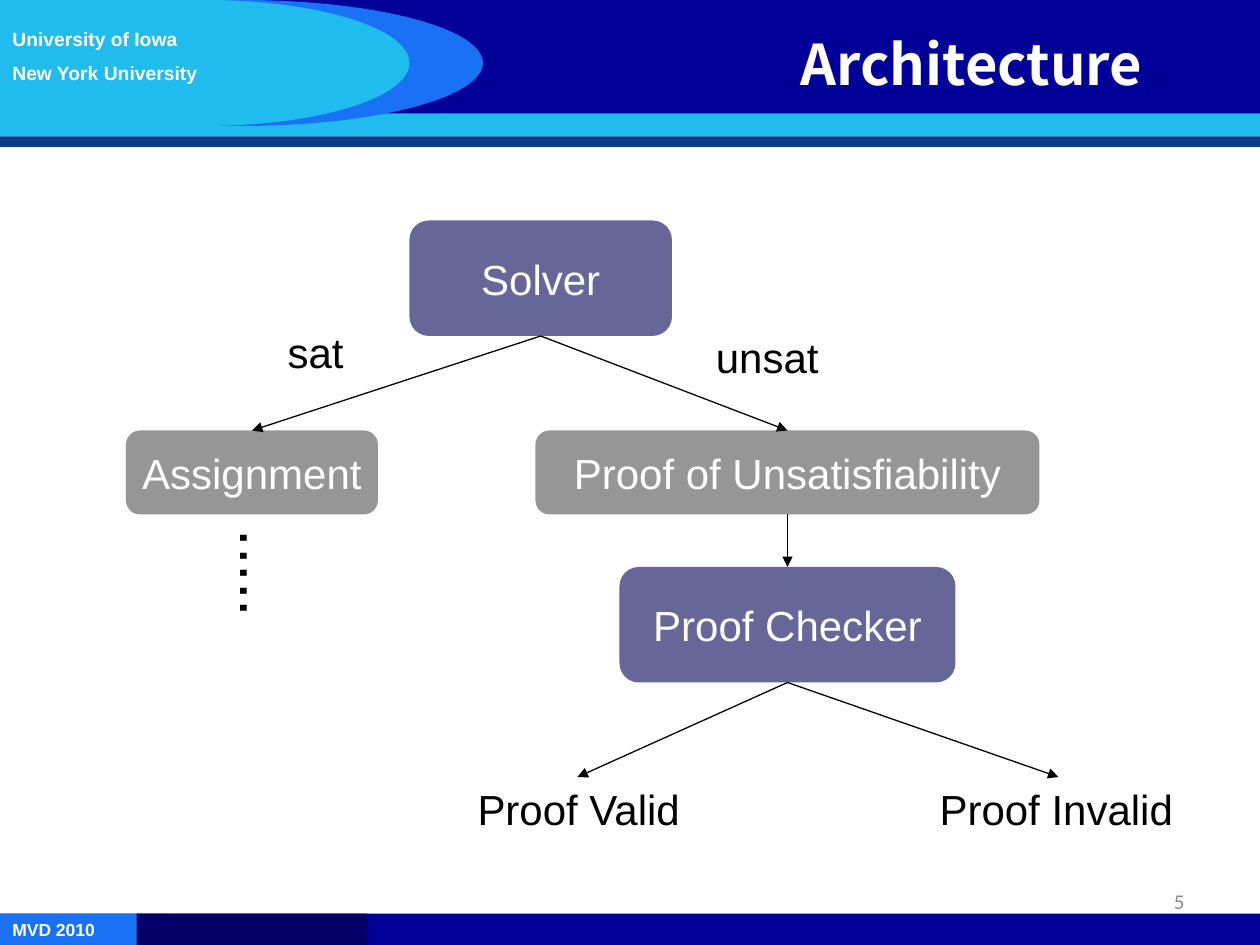
from dataclasses import dataclass

from lxml import etree
from pptx import Presentation
from pptx import util as u
from pptx.dml.color import RGBColor
from pptx.enum import shapes, text
from pptx.oxml import ns

COLUMNS, ROWS = 120, 90  # grid cells of 1/12 inch on a 10 x 7.5 inch slide
WIDTH, HEIGHT = u.Inches(10), u.Inches(7.5)
TOP, BOTTOM = 0, 2  # connection sites of a box
LEFT, CENTER, RIGHT = text.PP_ALIGN.LEFT, text.PP_ALIGN.CENTER, text.PP_ALIGN.RIGHT
MIDDLE = text.MSO_ANCHOR.MIDDLE
RECTANGLE = shapes.MSO_SHAPE.RECTANGLE
DELAY = shapes.MSO_SHAPE.FLOWCHART_DELAY


@dataclass(frozen=True)
class Theme:
    navy: str = "000099"
    dark_navy: str = "000066"
    deep_blue: str = "073B87"
    blue: str = "1971F3"
    cyan: str = "1FBCED"
    process: str = "666699"
    result: str = "969696"
    white: str = "FFFFFF"
    black: str = "000000"
    page_gray: str = "898989"
    body_font: str = "Arial"
    title_font: str = "Noto Sans CJK KR"
    page_font: str = "Calibri"
    title_size: int = 32
    dots_size: int = 36
    body_size: int = 24
    page_size: int = 12
    header_size: int = 11
    footer_size: int = 10
    line_width: float = 0.75


THEME = Theme()


def across(columns):
    return round(WIDTH * columns / COLUMNS)


def down(rows):
    return round(HEIGHT * rows / ROWS)


def frame(left, top, width, height):
    return across(left), down(top), across(width), down(height)


def write(shape, words, size=THEME.body_size, color=THEME.black, font=THEME.body_font,
          bold=False, align=LEFT, anchor=text.MSO_ANCHOR.TOP, wrap=False):
    text_frame = shape.text_frame
    text_frame.text = words
    text_frame.word_wrap = wrap
    text_frame.vertical_anchor = anchor
    for paragraph in text_frame.paragraphs:
        paragraph.alignment = align
        for run in paragraph.runs:
            run.font.size = u.Pt(size)
            run.font.name = font
            run.font.bold = bold
            run.font.color.rgb = RGBColor.from_string(color)


def add_block(parent, kind, place, color):
    shape = parent.shapes.add_shape(kind, *frame(*place))
    shape.shadow.inherit = False
    shape.fill.solid()
    shape.fill.fore_color.rgb = RGBColor.from_string(color)
    shape.line.fill.background()
    return shape


def add_label(parent, words, place, **style):
    label = parent.shapes.add_textbox(*frame(*place))
    write(label, words, **style)
    return label


def add_node(slide, words, place, color):
    node = add_block(slide, shapes.MSO_SHAPE.ROUNDED_RECTANGLE, place, color)
    write(node, words, color=THEME.white, align=CENTER, anchor=MIDDLE)
    return node


def add_arrow(slide, source, target=None, end=(0, 0)):
    """Arrow from the bottom of source to the top of target, or to a grid point."""
    x, y = across(end[0]), down(end[1])
    arrow = slide.shapes.add_connector(shapes.MSO_CONNECTOR.STRAIGHT, 0, 0, x, y)
    arrow.begin_connect(source, BOTTOM)
    if target is not None:
        arrow.end_connect(target, TOP)
    arrow.line.width = u.Pt(THEME.line_width)
    arrow.line.color.rgb = RGBColor.from_string(THEME.black)
    properties = arrow._element.spPr
    head = etree.SubElement(properties.find(ns.qn("a:ln")), ns.qn("a:tailEnd"))
    head.set("type", "triangle")
    etree.SubElement(properties, ns.qn("a:effectLst"))


def add_header(slide):
    header = slide.shapes.add_group_shape()
    for kind, place, color in (
        (RECTANGLE, (0, 10, COLUMNS, 3), THEME.cyan),
        (RECTANGLE, (0, 0, COLUMNS, 10.8), THEME.navy),
        (DELAY, (0, 0, 46, 12), THEME.blue),
        (DELAY, (0, 0, 39, 12), THEME.cyan),
        (RECTANGLE, (0, 13, COLUMNS, 1), THEME.deep_blue),
    ):
        add_block(header, kind, place, color)
    schools = add_label(header, "University of Iowa\nNew York University", (0, 2, 30, 6.7),
                        size=THEME.header_size, color=THEME.white, bold=True, wrap=True)
    schools.text_frame.paragraphs[1].space_before = u.Pt(6)


def set_title(slide):
    title = slide.shapes.title
    title.left, title.top, title.width, title.height = frame(57, 0, 53, 12)
    write(title, "Architecture", size=THEME.title_size, color=THEME.white,
          font=THEME.title_font, bold=True, align=RIGHT, anchor=MIDDLE, wrap=True)
    title.text_frame.auto_size = text.MSO_AUTO_SIZE.NONE
    # Bring the title in front of the header band
    title._element.getparent().append(title._element)


def add_diagram(slide):
    # Boxes
    solver = add_node(slide, "Solver", (39, 21, 25, 11), THEME.process)
    checker = add_node(slide, "Proof Checker", (59, 54, 32, 11), THEME.process)
    assignment = add_node(slide, "Assignment", (12, 41, 24, 8), THEME.result)
    proof = add_node(slide, "Proof of Unsatisfiability", (51, 41, 48, 8), THEME.result)

    # Arrows
    for source, target in ((solver, assignment), (solver, proof), (proof, checker)):
        add_arrow(slide, source, target)
    for end in ((55, 74), (100.8, 74)):
        add_arrow(slide, checker, end=end)

    # Branch and outcome labels
    for words, left, top, width in (
        ("sat", 26.2, 30.5, 7.8),
        ("unsat", 67, 31, 12.3),
        ("Proof Valid", 44.3, 74, 21.8),
        ("Proof Invalid", 88.3, 74, 24.8),
    ):
        add_label(slide, words, (left, top, width, 6.1))
    dots = add_label(slide, ".....", (19.8, 50.4, 10.8, 8.5), size=THEME.dots_size)
    dots.rotation = 90


def add_footer(slide):
    footer = slide.shapes.add_group_shape()
    add_block(footer, RECTANGLE, (0, 87, COLUMNS, 3), THEME.navy)
    event = add_block(footer, RECTANGLE, (0, 87, 16, 3), THEME.blue)
    write(event, "MVD 2010", size=THEME.footer_size, color=THEME.white,
          bold=True, anchor=MIDDLE)
    add_block(footer, RECTANGLE, (13, 87, 22, 3), THEME.dark_navy)
    add_label(slide, "5", (86, 83.4, 28, 4.8), size=THEME.page_size,
              color=THEME.page_gray, font=THEME.page_font, align=RIGHT,
              anchor=MIDDLE, wrap=True)


def main():
    presentation = Presentation()
    presentation.slide_width, presentation.slide_height = WIDTH, HEIGHT
    slide = presentation.slides.add_slide(presentation.slide_layouts[5])
    add_header(slide)
    set_title(slide)
    add_diagram(slide)
    add_footer(slide)
    presentation.save("out.pptx")


if __name__ == "__main__":
    main()
